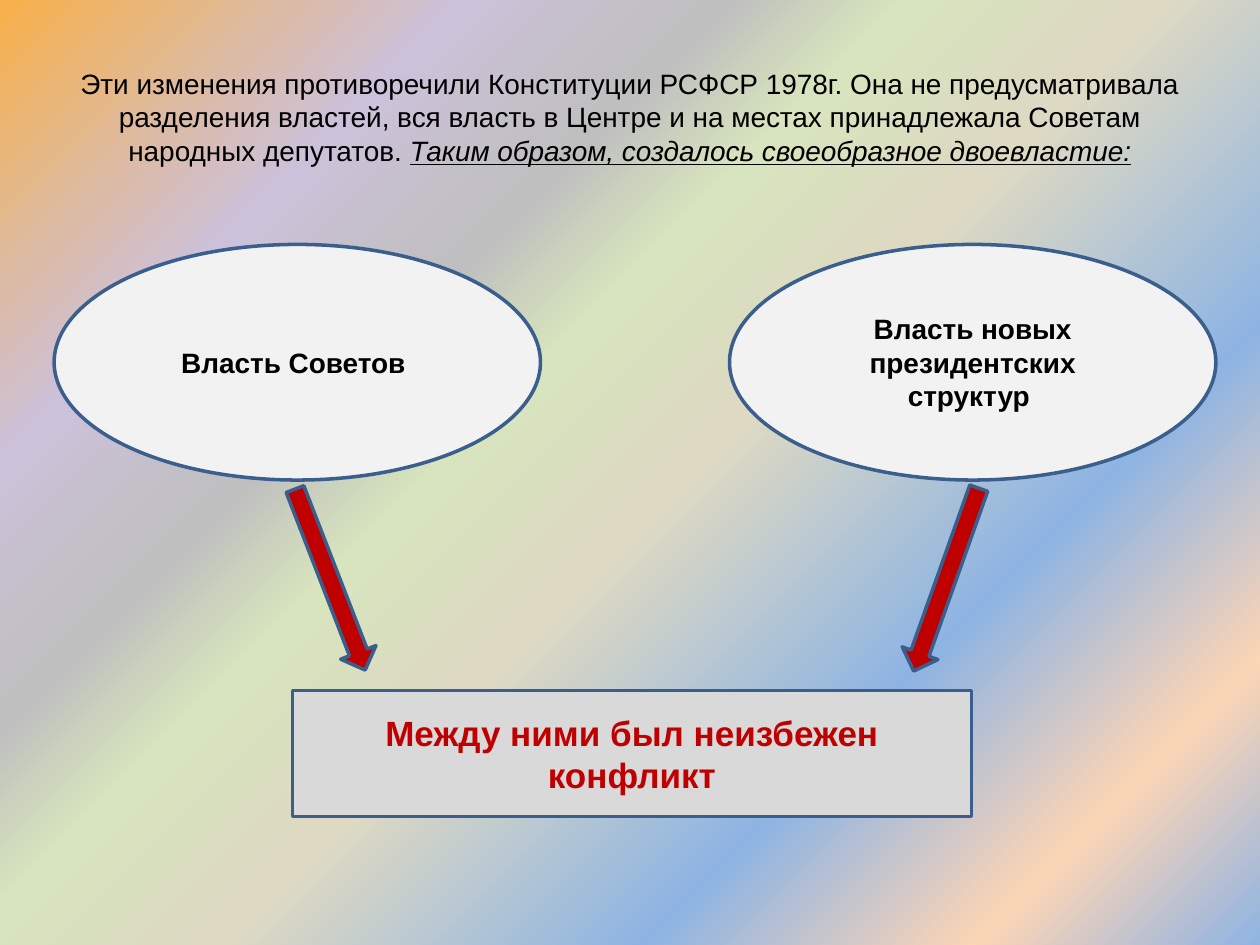
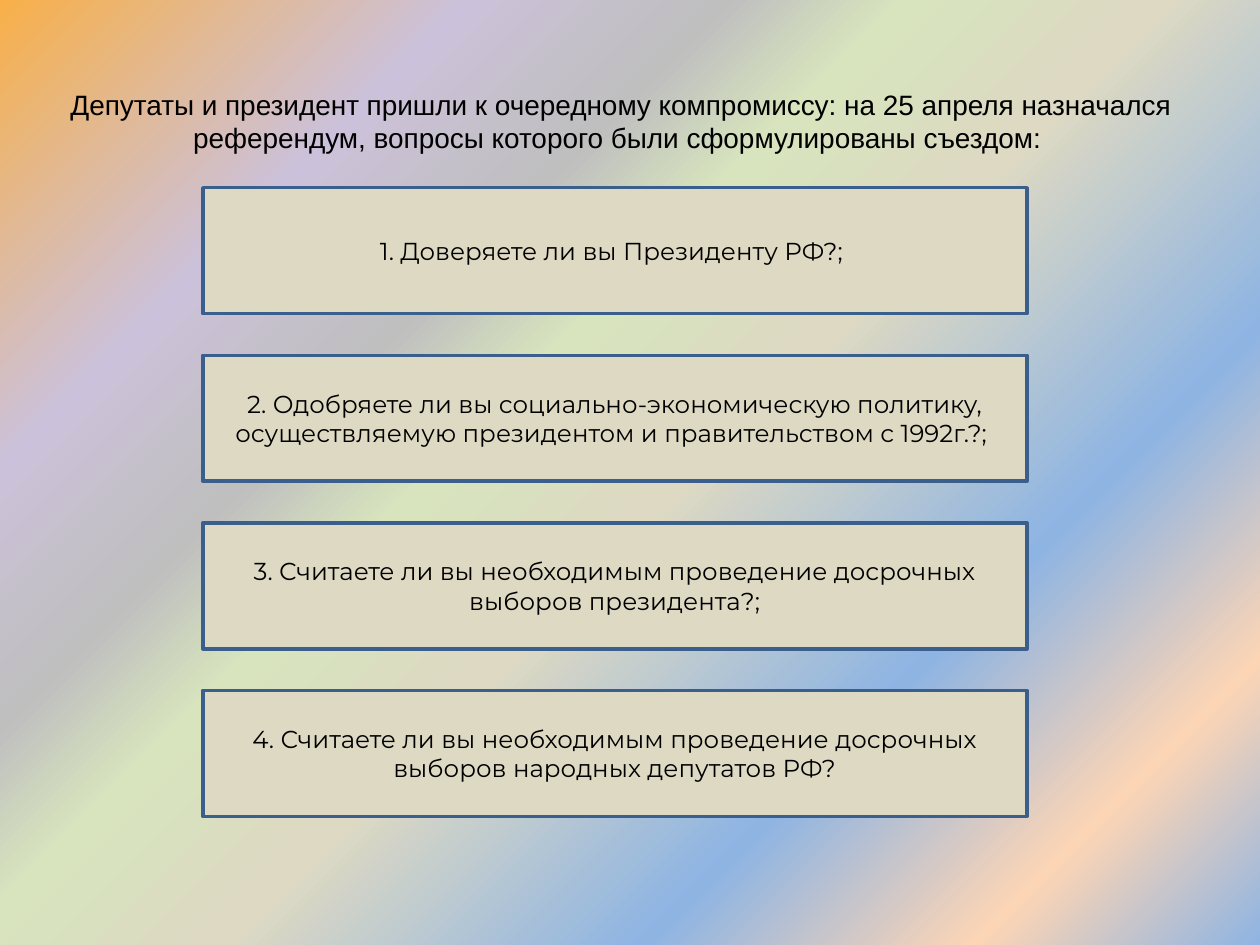
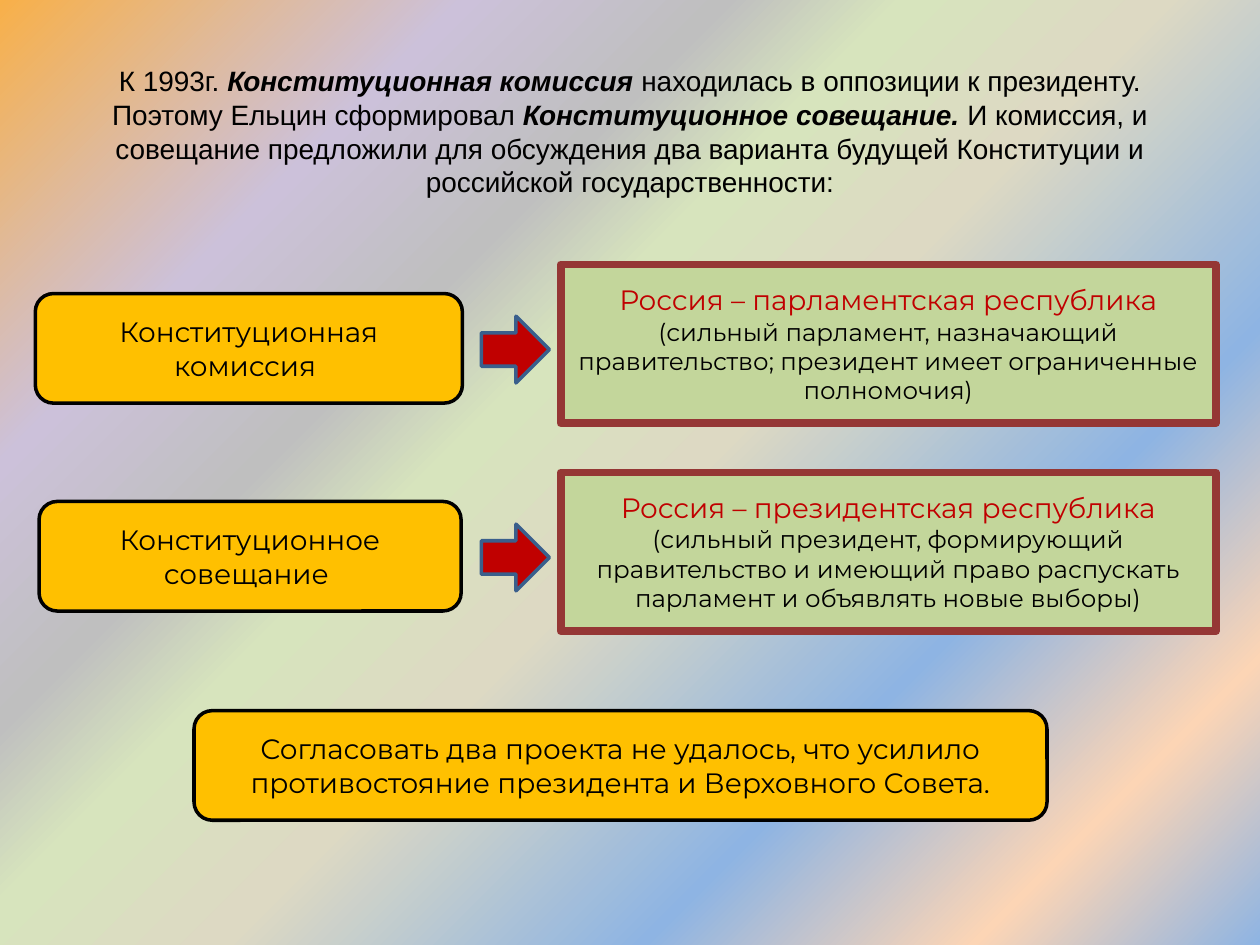
from dataclasses import dataclass

from lxml import etree
from pptx import Presentation
from pptx.dml.color import RGBColor
from pptx.enum.shapes import MSO_SHAPE as Preset
from pptx.enum.text import MSO_ANCHOR as Anchor, MSO_AUTO_SIZE as AutoSize, PP_ALIGN as Align
from pptx.util import Inches, Pt

# Colours
BLACK = RGBColor(0x00, 0x00, 0x00)
RED = RGBColor(0xC0, 0x00, 0x00)
BLUE = RGBColor(0x3A, 0x5F, 0x8C)
WHITE_GREY = RGBColor(0xF2, 0xF2, 0xF2)
GREY = RGBColor(0xD9, 0xD9, 0xD9)
SAND = RGBColor(0xDD, 0xD9, 0xC3)
GOLD = RGBColor(0xFF, 0xC0, 0x00)
GREEN = RGBColor(0xC3, 0xD6, 0x9B)
MAROON = RGBColor(0x95, 0x37, 0x35)

# Background gradient: position in percent and colour
RAINBOW = [
    (0, RGBColor(0x8E, 0xB4, 0xE3)),
    (13, RGBColor(0xFC, 0xD5, 0xB5)),
    (28, RGBColor(0x8E, 0xB4, 0xE3)),
    (47, SAND),
    (59, RGBColor(0xD7, 0xE4, 0xBD)),
    (67, RGBColor(0xBF, 0xBF, 0xBF)),
    (79, RGBColor(0xCC, 0xC1, 0xDA)),
    (100, RGBColor(0xF8, 0xB0, 0x49)),
]

HEADING_FONT = "Arial"
BODY_FONT = "Montserrat"
DRAWING_NS = "http://schemas.openxmlformats.org/drawingml/2006/main"


@dataclass
class Run:
    text: str
    size: float = 16
    font: str = BODY_FONT
    color: RGBColor = BLACK
    bold: bool = False
    italic: bool = False
    underline: bool = False


def heading(text, **style):
    return Run(text, font=HEADING_FONT, **style)


class Deck:
    """Holds the shared style and the slide being built."""

    def __init__(self):
        self.prs = Presentation()
        self.prs.slide_width, self.prs.slide_height = Inches(10), Inches(7.5)
        self.layout = self.prs.slide_layouts.get_by_name("Title Only")
        self.slide = None
        self.paint_background()

    def paint_background(self):
        master = self.prs.slide_master
        master.background.fill.solid()
        stops = "".join(
            f'<a:gs pos="{percent * 1000}"><a:srgbClr val="{color}"/></a:gs>'
            for percent, color in RAINBOW
        )
        gradient = etree.fromstring(
            f'<a:gradFill xmlns:a="{DRAWING_NS}" rotWithShape="1"><a:gsLst>{stops}</a:gsLst>'
            '<a:path path="circle"><a:fillToRect l="100000" t="100000"/></a:path>'
            '<a:tileRect r="-100000" b="-100000"/></a:gradFill>'
        )
        solid = master.element.xpath("p:cSld/p:bg/p:bgPr/a:solidFill")[0]
        solid.getparent().replace(solid, gradient)

    def add_text(self, frame, paragraphs):
        frame.word_wrap = True
        frame.auto_size = AutoSize.NONE
        frame.vertical_anchor = Anchor.MIDDLE
        for index, runs in enumerate(paragraphs):
            paragraph = frame.add_paragraph() if index else frame.paragraphs[0]
            paragraph.alignment = Align.CENTER
            for part in runs:
                run = paragraph.add_run()
                run.text = part.text
                font = run.font
                font.name, font.size = part.font, Pt(part.size)
                font.bold, font.italic, font.underline = part.bold, part.italic, part.underline
                font.color.rgb = part.color

    def new_slide(self, box, *runs):
        self.slide = self.prs.slides.add_slide(self.layout)
        title = self.slide.shapes.title
        title.left, title.top, title.width, title.height = map(Inches, box)
        self.add_text(title.text_frame, [runs])

    def block(self, preset, box, fill, *paragraphs, line=BLUE, weight=2):
        shape = self.slide.shapes.add_shape(preset, *map(Inches, box))
        shape.shadow.inherit = False
        shape.fill.solid()
        shape.fill.fore_color.rgb = fill
        shape.line.color.rgb = line
        shape.line.width = Pt(weight)
        self.add_text(shape.text_frame, paragraphs)
        return shape

    def arrow(self, preset, box, rotation=0):
        self.block(preset, box, RED).rotation = rotation

    def gold_box(self, box, text):
        self.block(Preset.ROUNDED_RECTANGLE, box, GOLD, [Run(text)], line=BLACK)


def build_dual_power(deck):
    deck.new_slide(
        (0.5, 0.3, 9, 1.25),
        heading("Эти изменения противоречили Конституции РСФСР 1978г. Она не предусматривала "
                "разделения властей, вся власть в Центре и на местах принадлежала Советам "
                "народных депутатов. "),
        heading("Таким образом, создалось своеобразное двоевластие:", italic=True, underline=True),
    )
    # Two powers
    powers = [(0.43, "Власть Советов "), (5.79, "Власть новых президентских структур ")]
    for left, power in powers:
        deck.block(Preset.OVAL, (left, 1.94, 3.86, 1.87), WHITE_GREY, [heading(power, bold=True)])
    # Conflict they lead to
    conflict = heading("Между ними был неизбежен конфликт", size=20, color=RED, bold=True)
    deck.block(Preset.RECTANGLE, (2.32, 5.48, 5.39, 1), GREY, [conflict])
    for left, rotation in [(2.47, 338.8), (7.36, 19.6)]:
        deck.arrow(Preset.DOWN_ARROW, (left, 3.83, 0.3, 1.54), rotation)


def build_referendum(deck):
    deck.new_slide(
        (0.43, 0.21, 9, 1.5),
        heading("Депутаты и президент пришли к очередному компромиссу: на 25 апреля назначался "
                "референдум, вопросы которого были сформулированы съездом: "),
    )
    # Referendum questions
    questions = [
        "1. Доверяете ли вы Президенту РФ?; ",
        "2. Одобряете ли вы социально-экономическую политику, осуществляемую президентом "
        "и правительством с 1992г.?; ",
        "3. Считаете ли вы необходимым проведение досрочных выборов президента?;",
        "4. Считаете ли вы необходимым проведение досрочных выборов народных депутатов РФ?",
    ]
    for row, question in enumerate(questions):
        box = (1.61, 1.49 + 1.33 * row, 6.54, 1)
        deck.block(Preset.RECTANGLE, box, SAND, [Run(question, size=14)])


def build_constitution_drafts(deck):
    deck.new_slide(
        (0.5, 0.29, 9, 1.5),
        heading("К 1993г. "),
        heading("Конституционная комиссия ", bold=True, italic=True),
        heading("находилась в оппозиции к президенту. Поэтому Ельцин сформировал "),
        heading("Конституционное совещание. ", bold=True, italic=True),
        heading("И комиссия, и совещание предложили для обсуждения два варианта будущей "
                "Конституции и российской государственности:"),
    )
    # Each body and the republic it proposed
    drafts = [
        (0.28, 3.39, "Конституционная комиссия ", "Россия – парламентская республика",
         "(сильный парламент, назначающий правительство; президент имеет ограниченные "
         "полномочия)"),
        (0.31, 3.35, "Конституционное совещание ", "Россия – президентская республика",
         "(сильный президент, формирующий правительство и имеющий право распускать парламент "
         "и объявлять новые выборы)"),
    ]
    for row, (left, width, body, republic, details) in enumerate(drafts):
        shift = 1.65 * row
        deck.gold_box((left, 2.33 + shift, width, 0.87), body)
        deck.block(Preset.RECTANGLE, (4.45, 2.1 + shift, 5.2, 1.26), GREEN,
                   [Run(republic, color=RED)], [Run(details, size=14)],
                   line=MAROON, weight=4.5)
        deck.arrow(Preset.RIGHT_ARROW, (3.82, 2.51 + shift, 0.54, 0.53))
    # Outcome
    deck.gold_box((1.54, 5.64, 6.77, 0.87),
                  "Согласовать два проекта не удалось, что усилило противостояние президента "
                  "и Верховного Совета.")


def main():
    deck = Deck()
    build_dual_power(deck)
    build_referendum(deck)
    build_constitution_drafts(deck)
    deck.prs.save("out.pptx")


if __name__ == "__main__":
    main()
